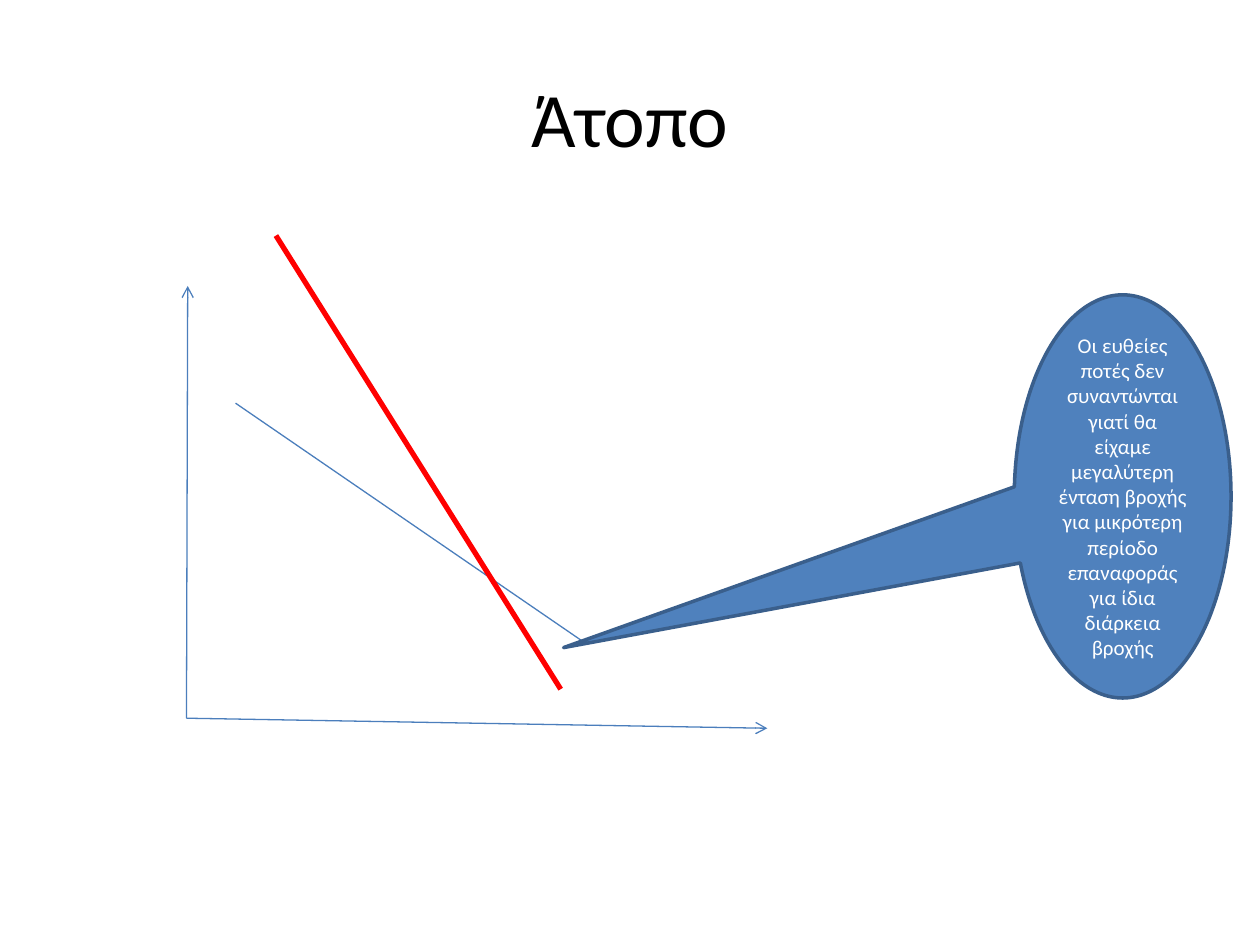
from lxml import etree
from pptx import Presentation
from pptx import util as u
from pptx.dml.color import RGBColor
from pptx.enum import shapes, text
from pptx.oxml.ns import qn

BLACK = RGBColor(0x00, 0x00, 0x00)
WHITE = RGBColor(0xFF, 0xFF, 0xFF)
RED = RGBColor(0xFF, 0x00, 0x00)
BLUE = RGBColor(0x4B, 0x7E, 0xBC)
FILL = RGBColor(0x4F, 0x81, 0xBD)
EDGE = RGBColor(0x3A, 0x5F, 0x8C)
FONT = "Calibri"
NOTE = (
    "Οι ευθείες ποτές δεν συναντώνται γιατί θα είχαμε "
    "μεγαλύτερη ένταση βροχής για μικρότερη περίοδο "
    "επαναφοράς για ίδια διάρκεια βροχής"
)


def write(frame, words, size, color):
    frame.word_wrap = True
    frame.vertical_anchor = text.MSO_ANCHOR.MIDDLE
    para = frame.paragraphs[0]
    para.alignment = text.PP_ALIGN.CENTER
    run = para.add_run()
    run.text = words
    run.font.name = FONT
    run.font.size = u.Pt(size)
    run.font.color.rgb = color


def add_title(slide, x, y, w, h):
    title = slide.shapes.title
    title.left, title.top = u.Inches(x), u.Inches(y)
    title.width, title.height = u.Inches(w), u.Inches(h)
    write(title.text_frame, "Άτοπο", 44, BLACK)


def add_line(slide, start, end, color=BLUE, width=0.75, arrow=False):
    line = slide.shapes.add_connector(
        shapes.MSO_CONNECTOR.STRAIGHT, *map(u.Inches, start + end)
    )
    line.line.color.rgb = color
    line.line.width = u.Pt(width)
    if arrow:
        etree.SubElement(line.line._get_or_add_ln(), qn("a:tailEnd"), type="arrow")
    etree.SubElement(line._element.spPr, qn("a:effectLst"))


def add_graph(slide, x, y, w, h):
    base = (x, y + h)
    add_line(slide, base, (x + 0.01, y + 0.4), arrow=True)
    add_line(slide, base, (x + w, y + h + 0.08), arrow=True)
    add_line(slide, (x + 0.39, y + 1.33), (x + 3.13, y + 3.21))
    add_line(slide, (x + 0.71, y), (x + 2.97, y + 3.6), RED, 3)


def add_note(slide, x, y, w, h):
    note = slide.shapes.add_shape(
        shapes.MSO_SHAPE.OVAL_CALLOUT, *map(u.Inches, (x, y, w, h))
    )
    note.adjustments[0] = -2.58
    note.adjustments[1] = 0.375
    note.shadow.inherit = False
    note.fill.solid()
    note.fill.fore_color.rgb = FILL
    note.line.color.rgb = EDGE
    note.line.width = u.Pt(2)
    write(note.text_frame, NOTE, 12, WHITE)


def main():
    deck = Presentation()
    deck.slide_width, deck.slide_height = u.Inches(10), u.Inches(7.5)
    slide = deck.slides.add_slide(deck.slide_layouts[5])
    add_title(slide, 0.5, 0.3, 9, 1.25)
    add_graph(slide, 1.48, 1.87, 4.61, 3.83)
    add_note(slide, 8.05, 2.34, 1.72, 3.2)
    deck.save("out.pptx")


if __name__ == "__main__":
    main()
